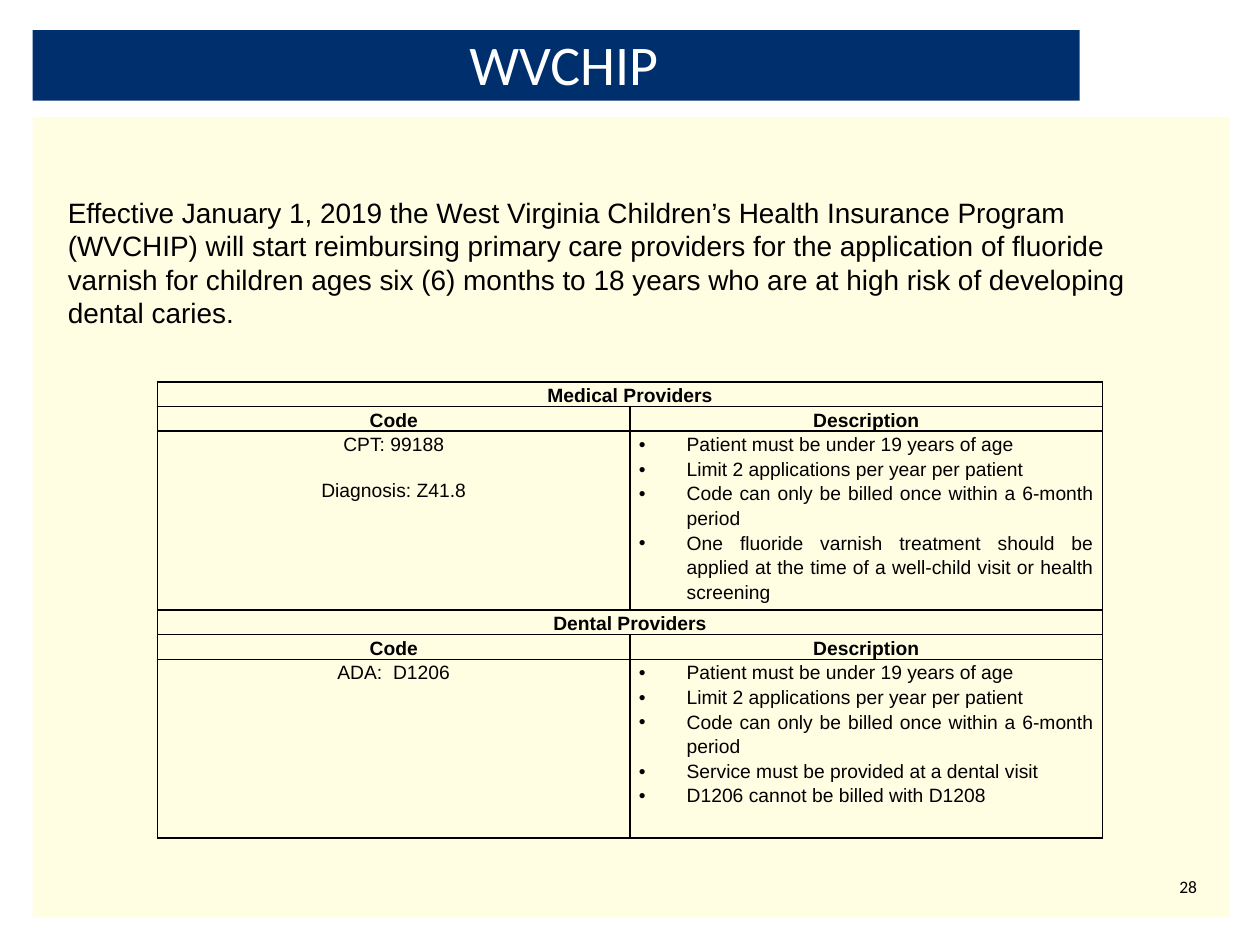
from dataclasses import dataclass

from lxml import etree
from pptx import Presentation
from pptx.dml.color import RGBColor
from pptx.enum.shapes import MSO_SHAPE
from pptx.enum.text import MSO_ANCHOR, PP_ALIGN
from pptx.oxml.ns import qn
from pptx.util import Inches, Pt

RECTANGLE = MSO_SHAPE.RECTANGLE
LEFT, CENTER, RIGHT, JUSTIFY = PP_ALIGN.LEFT, PP_ALIGN.CENTER, PP_ALIGN.RIGHT, PP_ALIGN.JUSTIFY
TOP, MIDDLE = MSO_ANCHOR.TOP, MSO_ANCHOR.MIDDLE

NAVY, CREAM, WHITE, BLACK = "002F6D", "FFFDE2", "FFFFFF", "000000"
COLUMN_WIDTH = 3.75
HEADING_HEIGHT, DETAIL_HEIGHT = 0.19, 1.42
BULLET_INDENT = 0.38


@dataclass
class Panel:
    left: float
    top: float
    width: float
    height: float
    color: str


@dataclass
class Label:
    left: float
    top: float
    width: float
    height: float
    text: str
    font: str
    size: int
    color: str = BLACK
    align: PP_ALIGN = LEFT
    anchor: MSO_ANCHOR = TOP
    margins: tuple = (0, 0)


@dataclass
class Section:
    heading: str
    codes: list
    rules: list


SHARED_RULES = [
    "Patient must be under 19 years of age",
    "Limit 2 applications per year per patient",
    "Code can only be billed once within a 6-month period",
]

PANELS = [
    Panel(0.26, 0.93, 9.5, 6.35, CREAM),
    Panel(0.26, 0.24, 8.31, 0.56, NAVY),
]

LABELS = [
    Label(0.32, 0.25, 8.31, 0.5, "WVCHIP", "Calibri", 32, WHITE, CENTER, MIDDLE),
    Label(9.12, 6.95, 0.38, 0.19, "28", "Calibri", 10, align=RIGHT),
    Label(0.44, 1.5, 9.06, 1.18,
          "Effective January 1, 2019 the West Virginia Children’s Health Insurance "
          "Program (WVCHIP) will start reimbursing primary care providers for the "
          "application of fluoride varnish for children ages six (6) months to 18 years "
          "who are at high risk of developing dental caries.",
          "Arial", 16, margins=(0.1, 0.05)),
]

SECTIONS = [
    Section("Medical Providers", ["CPT: 99188", "Diagnosis: Z41.8"], SHARED_RULES + [
        "One fluoride varnish treatment should be applied at the time of a "
        "well-child visit or health screening",
    ]),
    Section("Dental Providers", ["ADA:  D1206"], SHARED_RULES + [
        "Service must be provided at a dental visit",
        "D1206 cannot be billed with D1208",
    ]),
]


def rgb(color: str) -> RGBColor:
    return RGBColor.from_string(color)


def set_font(paragraph, name: str, size: int, color: str, bold: bool = False) -> None:
    font = paragraph.font
    font.name, font.size, font.bold = name, Pt(size), bold
    font.color.rgb = rgb(color)


def add_panel(page, panel: Panel) -> None:
    shape = page.shapes.add_shape(RECTANGLE, Inches(panel.left), Inches(panel.top),
                                  Inches(panel.width), Inches(panel.height))
    shape.shadow.inherit = False
    shape.fill.solid()
    shape.fill.fore_color.rgb = rgb(panel.color)
    shape.line.fill.background()


def add_label(page, label: Label) -> None:
    box = page.shapes.add_textbox(Inches(label.left), Inches(label.top),
                                  Inches(label.width), Inches(label.height))
    frame = box.text_frame
    frame.word_wrap = True
    frame.vertical_anchor = label.anchor
    side, edge = label.margins
    frame.margin_left = frame.margin_right = Inches(side)
    frame.margin_top = frame.margin_bottom = Inches(edge)
    paragraph = frame.paragraphs[0]
    paragraph.text = label.text
    paragraph.alignment = label.align
    set_font(paragraph, label.font, label.size, label.color)


def add_bullet(paragraph) -> None:
    properties = paragraph._p.get_or_add_pPr()
    properties.set("marL", str(Inches(BULLET_INDENT)))
    properties.set("indent", str(-Inches(BULLET_INDENT)))
    etree.SubElement(properties, qn("a:buFont"), typeface="Arial")
    etree.SubElement(properties, qn("a:buChar"), char="•")


def style_cell(cell) -> None:
    """Give a cell thin black borders, narrow margins and no fill."""
    cell.margin_left = cell.margin_right = Inches(0.07)
    cell.margin_top = cell.margin_bottom = 0
    properties = cell._tc.get_or_add_tcPr()
    for side in ("a:lnL", "a:lnR", "a:lnT", "a:lnB"):
        line = etree.SubElement(properties, qn(side), w=str(Pt(1)))
        fill = etree.SubElement(line, qn("a:solidFill"))
        etree.SubElement(fill, qn("a:srgbClr"), val=BLACK)
    cell.fill.background()


def fill_cell(cell, lines: list, bold: bool = False, bulleted: bool = False) -> None:
    frame = cell.text_frame
    for index, text in enumerate(lines):
        paragraph = frame.paragraphs[0] if index == 0 else frame.add_paragraph()
        paragraph.text = text
        paragraph.alignment = JUSTIFY if bulleted else CENTER
        paragraph.line_spacing = 1.15
        if bulleted:
            add_bullet(paragraph)
        elif index > 0:
            paragraph.space_before = Pt(12)
        set_font(paragraph, "Arial", 11, BLACK, bold)


def add_provider_table(page, sections: list) -> None:
    heights = [HEADING_HEIGHT, HEADING_HEIGHT, DETAIL_HEIGHT] * len(sections)
    table = page.shapes.add_table(len(heights), 2, Inches(1.25), Inches(3.03),
                                  Inches(2 * COLUMN_WIDTH), Inches(sum(heights))).table
    table.first_row = table.horz_banding = False
    for column in table.columns:
        column.width = Inches(COLUMN_WIDTH)
    for row, height in zip(table.rows, heights):
        row.height = Inches(height)
    for cell in table.iter_cells():
        style_cell(cell)

    for index, section in enumerate(sections):
        top = 3 * index
        table.cell(top, 0).merge(table.cell(top, 1))
        fill_cell(table.cell(top, 0), [section.heading], bold=True)
        # Keep the hidden half of the merged row as low as its text
        set_font(table.cell(top, 1).text_frame.paragraphs[0], "Arial", 11, BLACK)
        for column, title in enumerate(("Code", "Description")):
            fill_cell(table.cell(top + 1, column), [title], bold=True)
        fill_cell(table.cell(top + 2, 0), section.codes)
        fill_cell(table.cell(top + 2, 1), section.rules, bulleted=True)


def main() -> None:
    deck = Presentation()
    deck.slide_width, deck.slide_height = Inches(10), Inches(7.5)
    page = deck.slides.add_slide(deck.slide_layouts[6])

    # Background panel and title bar
    for panel in PANELS:
        add_panel(page, panel)

    # Billing codes by provider type
    add_provider_table(page, SECTIONS)

    # Title, page number and introduction
    for label in LABELS:
        add_label(page, label)

    deck.save("out.pptx")


if __name__ == "__main__":
    main()
